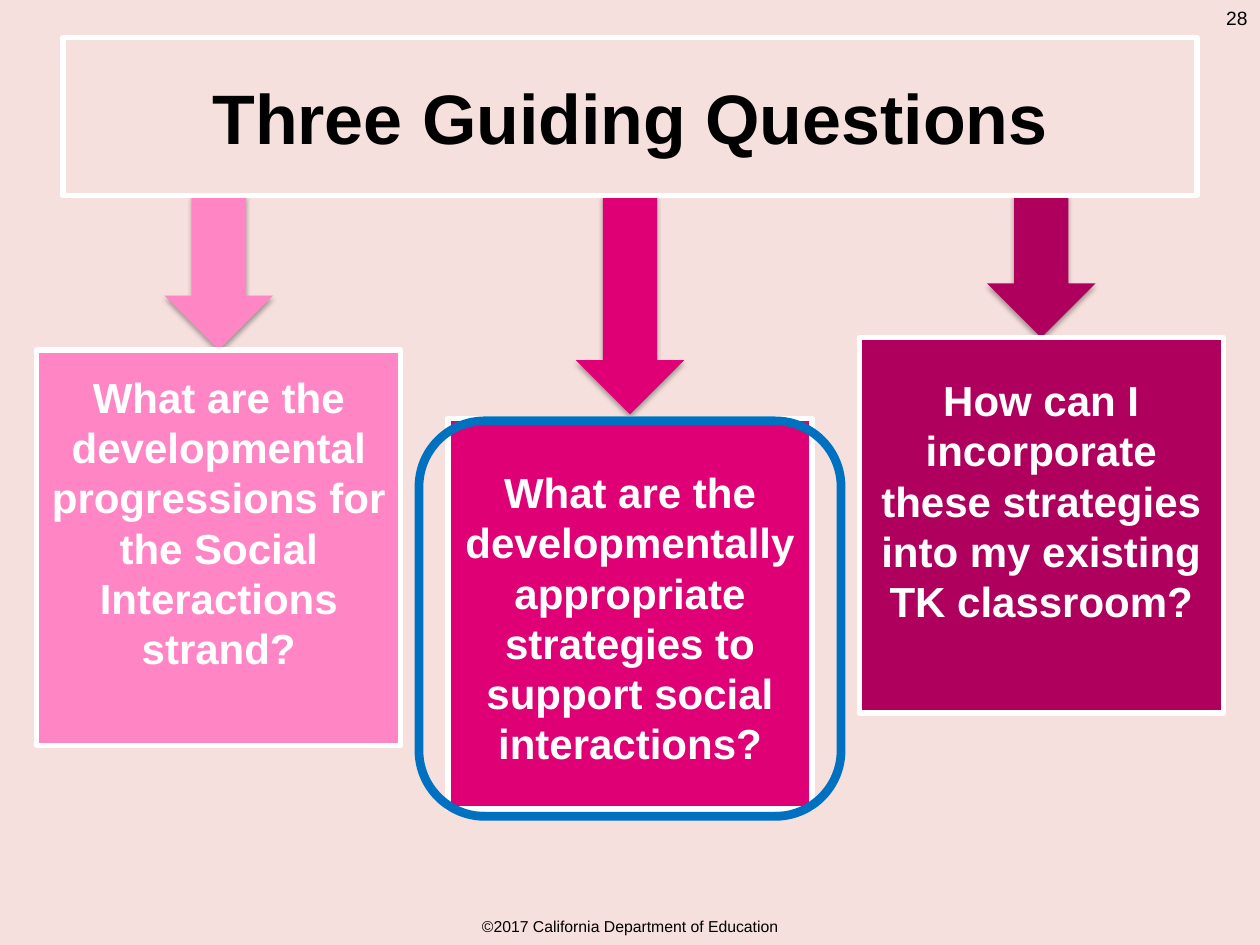
"""Build the Three Guiding Questions slide."""
from dataclasses import dataclass

from lxml.etree import SubElement
from pptx import Presentation
from pptx.dml.color import RGBColor
from pptx.enum.shapes import MSO_SHAPE
from pptx.enum.text import MSO_ANCHOR, MSO_AUTO_SIZE, PP_ALIGN
from pptx.oxml.ns import qn
from pptx.util import Pt

COLORS = {
    "background": "F5E0DD",
    "light": "FF85C5",
    "bright": "DE0074",
    "deep": "B0005D",
    "highlight": "0070C0",
    "white": "FFFFFF",
    "black": "000000",
}
TITLE_BOTTOM = 111.5
CARD_LEFT, CARD_STEP, CARD_WIDTH = 21, 235, 208
ARROW_WIDTH = 62


@dataclass
class Question:
    text: str
    color: str
    top: float
    height: float
    inset: float
    arrow_height: float


QUESTIONS = [
    Question("What are the developmental progressions for the Social Interactions strand?",
             "light", 200, 226, 12.2, 88.5),
    Question("What are the developmentally appropriate strategies to support social interactions?",
             "bright", 239, 223, 27.6, 125.3),
    Question("How can I incorporate these strategies into my existing TK classroom?",
             "deep", 193, 214.5, 21.1, 81.5),
]


def rgb(name: str) -> RGBColor:
    return RGBColor.from_string(COLORS[name])


def place(shape, left: float, top: float, width: float, height: float) -> None:
    shape.left, shape.top = Pt(left), Pt(top)
    shape.width, shape.height = Pt(width), Pt(height)


def outline(shape, color: str, width: float) -> None:
    shape.line.color.rgb = rgb(color)
    shape.line.width = Pt(width)


def write(shape, text: str, *, size: float, color: str = "black", bold: bool = False,
          align=PP_ALIGN.CENTER, anchor=MSO_ANCHOR.MIDDLE, inset: float = 3.6,
          line_height: float | None = None) -> None:
    frame = shape.text_frame
    frame.word_wrap = True
    frame.auto_size = MSO_AUTO_SIZE.NONE
    frame.vertical_anchor = anchor
    frame.margin_top = Pt(inset)
    frame.margin_left = frame.margin_right = Pt(7.2)
    frame.margin_bottom = Pt(3.6)
    paragraph = frame.paragraphs[0]
    paragraph.alignment = align
    paragraph.space_before = Pt(0)
    if line_height:
        paragraph.line_spacing = Pt(line_height)
    properties = paragraph._p.get_or_add_pPr()
    properties.set("marL", "0")
    properties.set("indent", "0")
    SubElement(properties, qn("a:buNone"))
    run = paragraph.add_run()
    run.text = text
    run.font.name = "Arial"
    run.font.size = Pt(size)
    run.font.bold = bold
    run.font.color.rgb = rgb(color)


def add_soft_shadow(shape) -> None:
    effects = SubElement(shape._element.spPr, qn("a:effectLst"))
    shadow = SubElement(effects, qn("a:outerShdw"), blurRad=str(Pt(3.1)),
                        dist=str(Pt(1.8)), dir="5400000", rotWithShape="0")
    tint = SubElement(shadow, qn("a:srgbClr"), val=COLORS["black"])
    SubElement(tint, qn("a:alpha"), val="35000")


def add_arrow(slide, left: float, height: float, color: str) -> None:
    arrow = slide.shapes.add_shape(MSO_SHAPE.DOWN_ARROW, Pt(left), Pt(TITLE_BOTTOM),
                                   Pt(ARROW_WIDTH), Pt(height))
    arrow.fill.solid()
    arrow.fill.fore_color.rgb = rgb(color)
    arrow.line.fill.background()
    add_soft_shadow(arrow)
    slide.shapes._spTree.insert(2, arrow._element)


def add_question(slide, card, question: Question, column: int) -> None:
    left = CARD_LEFT + column * CARD_STEP
    add_arrow(slide, left + (CARD_WIDTH - ARROW_WIDTH) / 2, question.arrow_height, question.color)
    place(card, left, question.top, CARD_WIDTH, question.height)
    card.fill.solid()
    card.fill.fore_color.rgb = rgb(question.color)
    outline(card, "white", 3)
    write(card, question.text, size=24, color="white", bold=True, anchor=MSO_ANCHOR.TOP,
          inset=question.inset, line_height=28.75)


def add_label(slide, text: str, left: float, top: float, width: float, height: float,
              **text_format) -> None:
    label = slide.shapes.add_textbox(Pt(left), Pt(top), Pt(width), Pt(height))
    write(label, text, **text_format)


def main() -> None:
    presentation = Presentation()
    presentation.slide_width, presentation.slide_height = Pt(720), Pt(540)
    slide = presentation.slides.add_slide(presentation.slide_layouts.get_by_name("Comparison"))
    slide.background.fill.solid()
    slide.background.fill.fore_color.rgb = rgb("background")

    heading, *cards, spare = slide.placeholders
    spare._element.getparent().remove(spare._element)
    place(heading, 36, 21.6, 648, 90)
    outline(heading, "white", 3)
    write(heading, "Three Guiding Questions", size=40, bold=True)

    for column, (card, question) in enumerate(zip(cards, QUESTIONS)):
        add_question(slide, card, question, column)

    highlight = slide.shapes.add_shape(MSO_SHAPE.ROUNDED_RECTANGLE, Pt(239.4), Pt(240.5),
                                       Pt(241.2), Pt(226))
    highlight.shadow.inherit = False
    highlight.fill.background()
    outline(highlight, "highlight", 5)

    add_label(slide, "28", 684, 0, 36, 28.8, size=11, align=PP_ALIGN.RIGHT,
              anchor=MSO_ANCHOR.TOP)
    add_label(slide, "©2017 California Department of Education", 27, 520.5, 666, 18, size=9)
    presentation.save("out.pptx")


if __name__ == "__main__":
    main()
